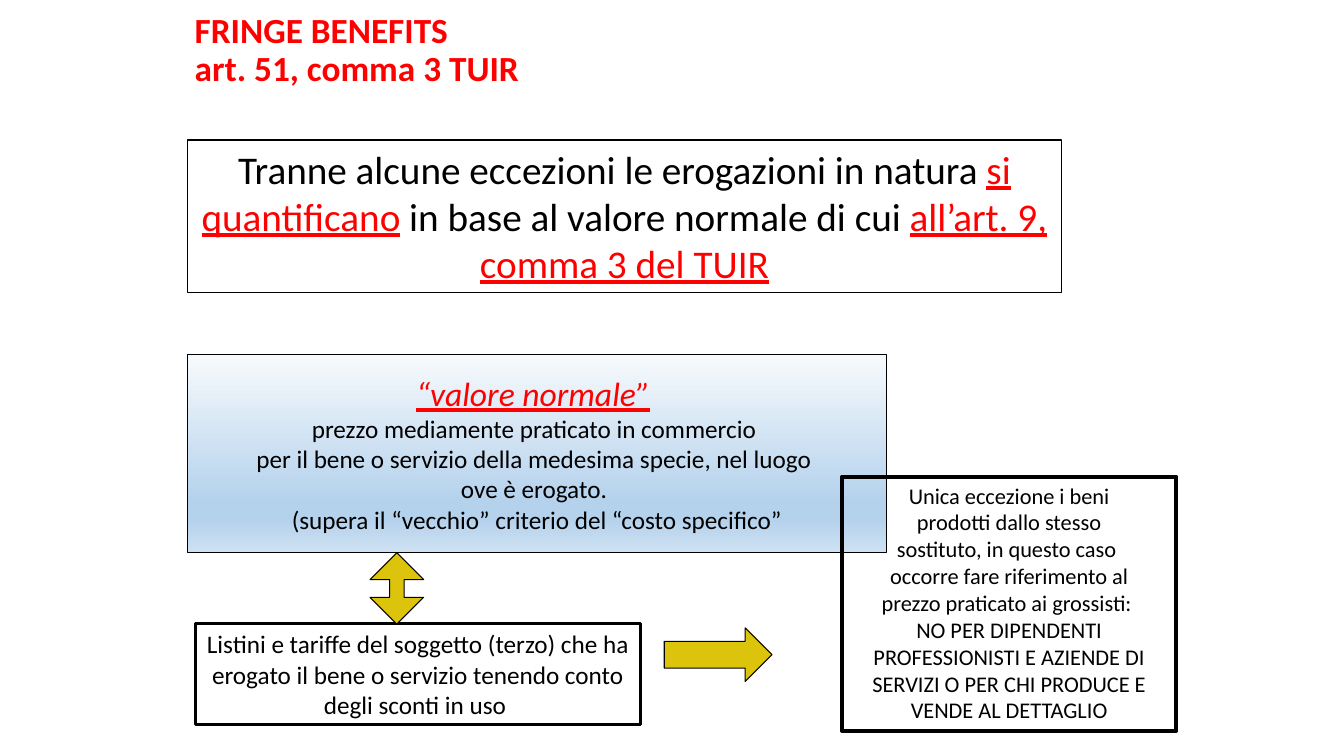
"""Build the slide on fringe benefits and their normal value."""
from copy import deepcopy

from pptx import Presentation
from pptx.dml.color import RGBColor
from pptx.enum import shapes, text
from pptx.util import Pt

BLACK = RGBColor(0x00, 0x00, 0x00)
RED = RGBColor(0xFF, 0x00, 0x00)
GOLD = RGBColor(0xDC, 0xC3, 0x0C)
GRADIENT = [
    (0, RGBColor(0xF7, 0xFA, 0xFD)),
    (0.74, RGBColor(0xB5, 0xD2, 0xEC)),
    (0.83, RGBColor(0xB5, 0xD2, 0xEC)),
    (1, RGBColor(0xCE, 0xE1, 0xF2)),
]


class SlideBuilder:
    """Holds the style and the current slide."""

    font_name = "Calibri"

    def __init__(self, slide):
        self.slide = slide

    def title(self, content, left, top, width, height, size):
        box = self.slide.shapes.add_textbox(Pt(left), Pt(top), Pt(width), Pt(height))
        frame = box.text_frame
        frame.word_wrap = True
        frame.vertical_anchor = text.MSO_ANCHOR.MIDDLE
        paragraph = frame.paragraphs[0]
        paragraph.text = content
        paragraph.line_spacing = 0.9
        self.style(paragraph.font, size, RED)
        paragraph.font.bold = True

    def style(self, font, size, color):
        font.name = self.font_name
        font.size = Pt(size)
        font.color.rgb = color

    def shape(self, kind, left, top, width, height, line_width=0.75):
        shape = self.slide.shapes.add_shape(
            kind, Pt(left), Pt(top), Pt(width), Pt(height))
        shape.shadow.inherit = False
        shape.fill.background()
        shape.line.color.rgb = BLACK
        shape.line.width = Pt(line_width)
        return shape

    def box(self, paragraphs, left, top, width, height, size, line_width=0.75):
        shape = self.shape(shapes.MSO_SHAPE.RECTANGLE, left, top, width, height, line_width)
        frame = shape.text_frame
        frame.word_wrap = True
        frame.vertical_anchor = text.MSO_ANCHOR.TOP
        for index, runs in enumerate(paragraphs):
            paragraph = frame.add_paragraph() if index else frame.paragraphs[0]
            paragraph.alignment = text.PP_ALIGN.CENTER
            self.style(paragraph.font, size, BLACK)
            for content, highlighted in runs:
                run = paragraph.add_run()
                run.text = content
                if highlighted:
                    run.font.color.rgb = RED
                    run.font.underline = True
        return shape

    def gradient(self, shape, stops):
        shape.fill.gradient()
        shape.fill.gradient_angle = 270
        stop_list = shape.fill._fill._gradFill.gsLst
        for _ in range(len(stops) - len(stop_list)):
            stop_list.append(deepcopy(stop_list[0]))
        for stop, (position, color) in zip(shape.fill.gradient_stops, stops):
            stop.position = position
            stop.color.rgb = color

    def arrow(self, kind, left, top, width, height, head):
        shape = self.shape(kind, left, top, width, height)
        shape.adjustments[0] = 0.5
        shape.adjustments[1] = head
        shape.fill.solid()
        shape.fill.fore_color.rgb = GOLD


def plain(*lines):
    """Return one unhighlighted run for each line."""
    return [[(line, False)] for line in lines]


def main():
    presentation = Presentation()
    presentation.slide_width = Pt(960)
    presentation.slide_height = Pt(540)
    builder = SlideBuilder(presentation.slides.add_slide(presentation.slide_layouts[6]))

    builder.title("FRINGE BENEFITS\vart. 51, comma 3 TUIR", 132, 18, 678, 36.7, 25.2)

    builder.box([[
        ("Tranne alcune eccezioni le erogazioni in natura ", False),
        ("si quantificano", True),
        (" in base al valore normale di cui ", False),
        ("all’art. 9, comma 3 del TUIR", True),
    ]], 134, 100, 624, 109, 28)

    normal_value = builder.box(
        [[("“valore normale”", True), (" ", False)]] + plain(
            "prezzo mediamente praticato in commercio ",
            "per il bene o servizio della medesima specie, nel luogo ",
            "ove è erogato. ",
            "(supera il “vecchio” criterio del “costo specifico”",
        ), 134, 253, 499, 142, 18)
    builder.gradient(normal_value, GRADIENT)
    normal_value.text_frame.word_wrap = False
    normal_value.text_frame.vertical_anchor = text.MSO_ANCHOR.MIDDLE
    heading = normal_value.text_frame.paragraphs[0]
    heading.font.size = Pt(24)
    heading.runs[0].font.italic = True

    builder.box(plain(
        "Listini e tariffe del soggetto (terzo) che ha erogato il bene o servizio "
        "tenendo conto degli sconti in uso ",
    ), 139.5, 445.5, 318, 72, 18, 2.25)

    builder.arrow(shapes.MSO_SHAPE.RIGHT_ARROW, 474.5, 448.5, 77, 38.3, 0.5)
    builder.arrow(shapes.MSO_SHAPE.UP_DOWN_ARROW, 264.3, 394.8, 38.3, 51, 0.27)

    builder.box(plain(
        "Unica eccezione i beni",
        "prodotti dallo stesso",
        "sostituto, in questo caso ",
        "occorre fare riferimento al",
        "prezzo praticato ai grossisti: ",
        "NO PER DIPENDENTI PROFESSIONISTI E AZIENDE DI SERVIZI "
        "O PER CHI PRODUCE E VENDE AL DETTAGLIO",
    ), 601.3, 340.5, 239, 181.5, 16, 2.75)

    presentation.save("out.pptx")


if __name__ == "__main__":
    main()
